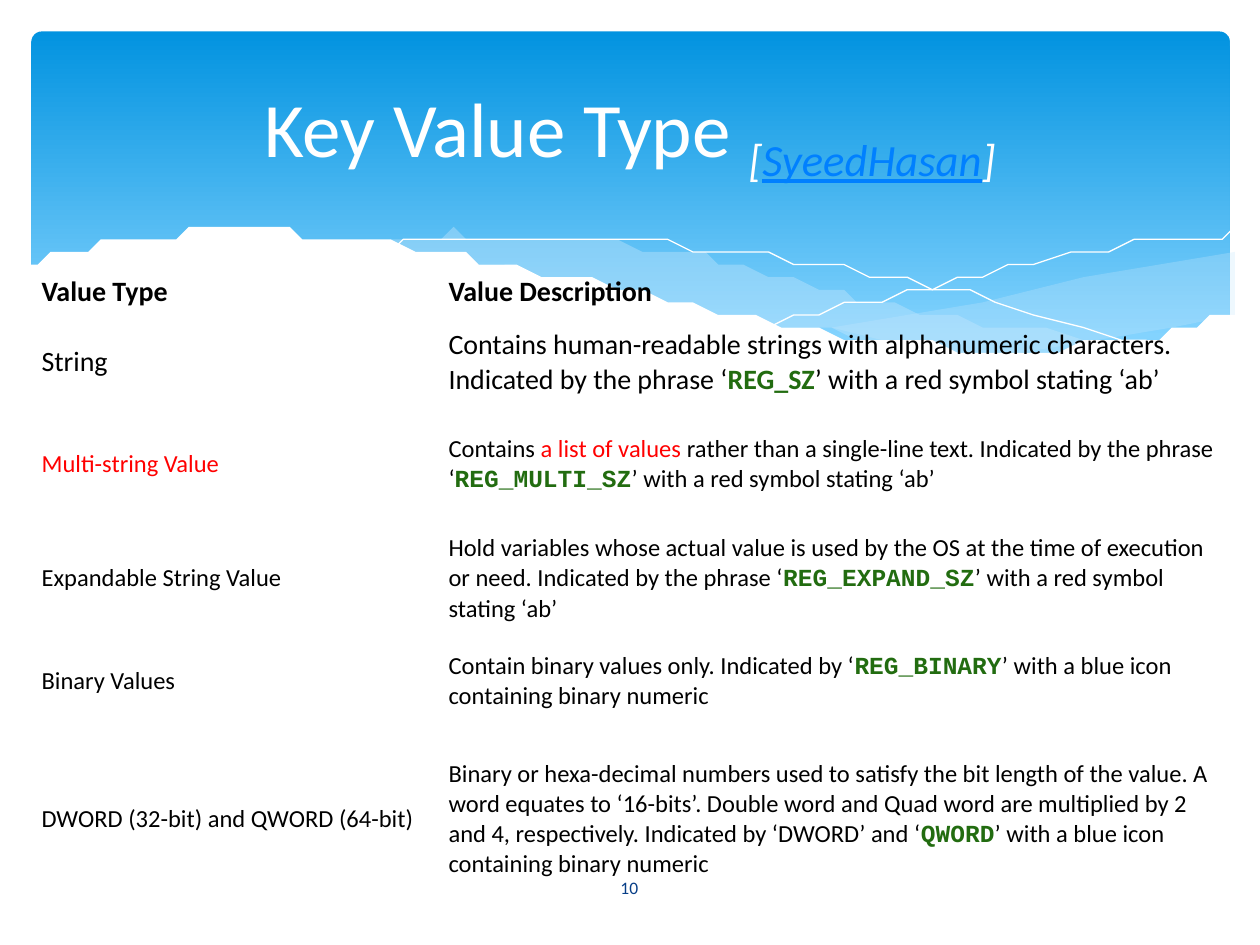
import dataclasses

import pptx
import pptx.dml.color
import pptx.enum.shapes
import pptx.enum.text
import pptx.oxml
import pptx.oxml.ns
import pptx.util

COLS, ROWS = 100, 75
CELL = pptx.util.Inches(0.1)
ALIGN = pptx.enum.text.PP_ALIGN
MIDDLE = pptx.enum.text.MSO_ANCHOR.MIDDLE
PLAIN_GRID = "{2D5ABB26-0587-4C30-8999-92F81FD0307C}"


@dataclasses.dataclass(frozen=True)
class Theme:
    font: str = "Calibri"
    code: str = "Courier New"
    black: str = "000000"
    white: str = "FFFFFF"
    red: str = "FF0000"
    green: str = "226C10"
    link: str = "0080FF"
    navy: str = "073E87"
    mist: str = "C6E7FC"
    sky: tuple = ((0, "0293E0"), (0.9, "83D3FE"))
    title: int = 44
    large: int = 16
    body: int = 14
    small: int = 10


THEME = Theme()
STYLES = {
    "body": {},
    "head": {"bold": True},
    "red": {"color": THEME.red},
    "key": {"color": THEME.green, "bold": True},
    "code": {"color": THEME.green, "bold": True, "name": THEME.code},
    "title": {"color": THEME.white},
    "note": {"color": THEME.white, "italic": True},
    "link": {"color": THEME.link, "italic": True, "underline": True},
    "page": {"color": THEME.navy},
}

# Knots of the waves, in grid units
PALE = [(97.6, 20), (92.1, 21), (86.1, 22.3), (77.9, 24.2), (66.1, 26.5), (70.5, 27.1),
        (75.7, 27.6), (81.4, 27.8), (87.2, 27.4), (92.8, 26.3), (97.6, 24.7)]
BROAD = [(89.3, 27.3), (80.7, 26), (70.6, 24), (62.9, 22.2), (55.5, 20.5), (48.9, 19.4),
         (42, 18.7), (36.1, 18.5), (31.3, 18.8), (28.6, 19.1), (34.2, 19.9), (42.7, 21.6),
         (53, 24), (61.8, 25.8), (69.5, 27), (76.1, 27.7), (81.8, 27.8), (89.3, 27.3)]
FALL = [(30.9, 19.5), (35.3, 18.9), (40.1, 18.7), (46.9, 18.9), (53.3, 19.4),
        (60.8, 20.4), (69.5, 21.9), (79.5, 24.1), (90.7, 27.2)]
RISE = [(61.3, 25.7), (69.5, 23.5), (77.6, 21.6), (86.6, 19.9), (92.4, 19), (97.5, 18.5)]
FRONT = [(97.7, 24.6), (94, 25.9), (88.7, 27.1), (82.3, 27.7), (76.1, 27.5), (68.8, 26.8),
         (60.3, 25.4), (52.9, 23.9), (44.7, 22), (36.5, 20.2), (29.2, 19), (23, 18.5),
         (17.7, 18.4), (13.2, 18.6), (9.5, 19.1), (6.7, 19.7), (4, 20.5), (2.3, 21.3)]

TABLE = [
    ([("Value Type", "head")], [("Value Description", "head")]),
    ([("String", "body")],
     [("Contains human-readable strings with alphanumeric characters. "
       "Indicated by the phrase ‘", "body"), ("REG_SZ", "key"),
      ("’ with a red symbol stating ‘ab’", "body")]),
    ([("Multi-string Value", "red")],
     [("Contains ", "body"), ("a list of values ", "red"),
      ("rather than a single-line text. Indicated by the phrase ‘", "body"),
      ("REG_MULTI_SZ", "code"), ("’ with a red symbol stating ‘ab’", "body")]),
    ([("Expandable String Value", "body")],
     [("Hold variables whose actual value is used by the OS at the time of execution "
       "or need. Indicated by the phrase ‘", "body"), ("REG_EXPAND_SZ", "code"),
      ("’ with a red symbol stating ‘ab’", "body")]),
    ([("Binary Values", "body")],
     [("Contain binary values only. Indicated by ‘", "body"), ("REG_BINARY", "code"),
      ("’ with a blue icon containing binary numeric", "body")]),
    ([("DWORD (32-bit) and QWORD (64-bit)", "body")],
     [("Binary or hexa-decimal numbers used to satisfy the bit length of the value. "
       "A word equates to ‘16-bits’. Double word and Quad word are multiplied by 2 "
       "and 4, respectively. Indicated by ‘DWORD’ and ‘", "body"), ("QWORD", "code"),
      ("’ with a blue icon containing binary numeric", "body")]),
]
WIDTHS = (32.3, 62.2)
HEIGHTS = (2.5, 8.1, 8.1, 10, 6.3, 15.6)


def grid(*units):
    return [round(unit * CELL) for unit in units]


def tint(code):
    return pptx.dml.color.RGBColor.from_string(code)


def apply(thing, values):
    for name, value in values.items():
        setattr(thing, name, value)


def write(frame, runs, size, align=ALIGN.LEFT):
    para = frame.paragraphs[0]
    para.alignment = align
    for text, style in runs:
        run = para.add_run()
        run.text = text
        look = {"name": THEME.font, "size": pptx.util.Pt(size), "bold": False, **STYLES[style]}
        run.font.color.rgb = tint(look.pop("color", THEME.black))
        apply(run.font, look)
    return para


def curve(knots, steps=4):
    """Points of a Catmull-Rom curve through the knots."""
    ends = [knots[0], *knots, knots[-1]]
    points = [knots[0]]
    for a, b, c, d in zip(ends, ends[1:], ends[2:], ends[3:]):
        for step in range(1, steps + 1):
            t = step / steps
            points.append(tuple(
                (2 * q + (r - p) * t + (2 * p - 5 * q + 4 * r - s) * t**2
                 + (3 * q - p - 3 * r + s) * t**3) / 2
                for p, q, r, s in zip(a, b, c, d)))
    return points


def add_wave(slide, points, fill=None, alpha=100):
    """A filled wave, or a white hairline where no fill is given."""
    start, *rest = points
    pen = slide.shapes.build_freeform(*start, scale=CELL)
    pen.add_line_segments(rest, close=fill is not None)
    wave = pen.convert_to_shape()
    wave.shadow.inherit = False
    if fill is None:
        wave.fill.background()
        wave.line.color.rgb = tint(THEME.white)
        wave.line.width = 0
        return
    wave.line.fill.background()
    wave.fill.solid()
    wave.fill.fore_color.rgb = tint(fill)
    if alpha < 100:
        shade = wave.fill._xPr.find(".//" + pptx.oxml.ns.qn("a:srgbClr"))
        shade.append(pptx.oxml.parse_xml(
            f'<a:alpha {pptx.oxml.ns.nsdecls("a")} val="{alpha * 1000}"/>'))


def add_panel(slide):
    panel = slide.shapes.add_shape(
        pptx.enum.shapes.MSO_SHAPE.ROUNDED_RECTANGLE, *grid(2.5, 2.5, 95.1, 27))
    panel.adjustments[0] = 0.03
    panel.shadow.inherit = False
    panel.line.fill.background()
    panel.fill.gradient()
    panel.fill.gradient_angle = 270
    for stop, (place, code) in zip(panel.fill.gradient_stops, THEME.sky):
        stop.position = place
        stop.color.rgb = tint(code)


def add_table(slide):
    frame = slide.shapes.add_table(
        len(HEIGHTS), len(WIDTHS), *grid(2.8, 21.6, sum(WIDTHS), sum(HEIGHTS)))
    table = frame.table
    apply(table, {"first_row": False, "horz_banding": False})
    table._tbl.tblPr.find(pptx.oxml.ns.qn("a:tableStyleId")).text = PLAIN_GRID
    for col, width in zip(table.columns, grid(*WIDTHS)):
        col.width = width
    side, edge = grid(0.5, 0.2)
    form = {"margin_left": side, "margin_right": side, "margin_top": edge,
            "margin_bottom": edge, "vertical_anchor": MIDDLE}
    for index, (row, height, texts) in enumerate(zip(table.rows, grid(*HEIGHTS), TABLE)):
        row.height = height
        for cell, runs in zip(row.cells, texts):
            apply(cell, form)
            cell.fill.background()
            write(cell.text_frame, runs, THEME.large if index < 2 else THEME.body)


def add_page(slide, number):
    box = slide.shapes.add_textbox(*grid(43.6, 68.4, 12.7, 4))
    apply(box.text_frame, {"word_wrap": True, "vertical_anchor": MIDDLE})
    write(box.text_frame, [(number, "page")], THEME.small, ALIGN.CENTER)


def set_title(slide):
    title = slide.shapes.title
    apply(title, dict(zip(("left", "top", "width", "height"), grid(5, 3.7, 90, 13.7))))
    title.text_frame.vertical_anchor = MIDDLE
    runs = [("Key Value Type ", "title"), ("[", "note"), ("SyeedHasan", "link"), ("]", "note")]
    para = write(title.text_frame, runs, THEME.title, ALIGN.CENTER)
    for run in para.runs[1:]:
        run.font._rPr.set("baseline", "-25000")
    slide.shapes._spTree.append(title._element)  # bring to front


def main():
    deck = pptx.Presentation()
    deck.slide_width, deck.slide_height = grid(COLS, ROWS)
    slide = deck.slides.add_slide(deck.slide_layouts[5])
    add_panel(slide)
    add_wave(slide, PALE, THEME.mist, 29)
    add_wave(slide, curve(BROAD), THEME.mist, 40)
    for knots in (FALL, RISE):
        add_wave(slide, curve(knots))
    add_wave(slide, curve(FRONT) + [(2.3, 32.9), (97.7, 32.9)], THEME.white)
    add_table(slide)
    add_page(slide, "10")
    set_title(slide)
    deck.save("out.pptx")


if __name__ == "__main__":
    main()
